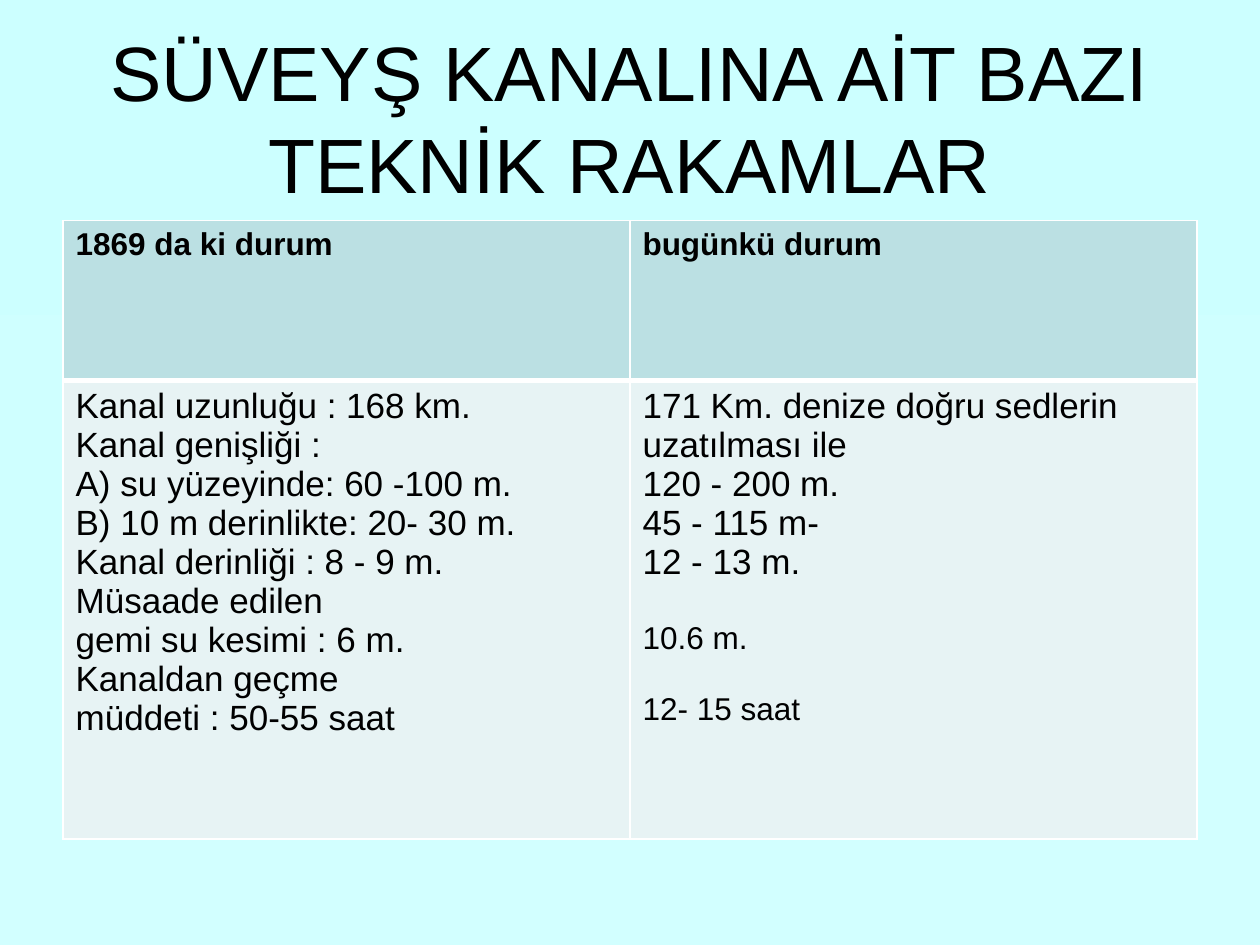
"""Build a slide comparing the Suez Canal's figures in 1869 and today."""
from lxml import etree
from pptx import Presentation
from pptx.dml.color import RGBColor
from pptx.enum.text import MSO_ANCHOR, PP_ALIGN
from pptx.oxml.ns import qn
from pptx.util import Inches, Pt

CENTER = PP_ALIGN.CENTER
MIDDLE = MSO_ANCHOR.MIDDLE
TOP = MSO_ANCHOR.TOP
BLACK = RGBColor(0x00, 0x00, 0x00)
WHITE = RGBColor(0xFF, 0xFF, 0xFF)
SKY_TOP = RGBColor(0xCC, 0xFF, 0xFF)
SKY_BOTTOM = RGBColor(0xD2, 0xFF, 0xFF)
HEADER_FILL = RGBColor(0xBB, 0xE0, 0xE3)
BODY_FILL = RGBColor(0xE7, 0xF3, 0xF4)
FONT = "Arial"

TITLE = "SÜVEYŞ KANALINA AİT BAZI TEKNİK RAKAMLAR"
HEADERS = ["1869 da ki durum", "bugünkü durum"]
FIGURES_1869 = [
    "Kanal uzunluğu : 168 km.",
    "Kanal genişliği :",
    "A) su yüzeyinde: 60 -100 m.",
    "B) 10 m derinlikte: 20- 30 m.",
    "Kanal derinliği : 8 - 9 m.",
    "Müsaade edilen",
    "gemi su kesimi : 6 m.",
    "Kanaldan geçme",
    "müddeti : 50-55 saat",
]
FIGURES_TODAY = [
    "171 Km. denize doğru sedlerin",
    "uzatılması ile",
    "120 - 200 m.",
    "45 - 115 m-",
    "12 - 13 m.",
]
SPACED_FIGURES = [("10.6 m.", 22.5), ("12- 15 saat", 20.25)]


def write_text(paragraph, text, size=20, bold=False, align=None, before=0):
    paragraph.alignment = align
    paragraph.space_before = Pt(before)
    run = paragraph.add_run()
    run.text = text
    run.font.name = FONT
    run.font.size = Pt(size)
    run.font.bold = bold
    run.font.color.rgb = BLACK


class SlideBuilder:
    def __init__(self, presentation):
        self.slide = presentation.slides.add_slide(presentation.slide_layouts[5])

    def background(self, top, bottom):
        fill = self.slide.background.fill
        fill.gradient()
        fill.gradient_angle = 270
        for stop, color in zip(fill.gradient_stops, (top, bottom)):
            stop.color.rgb = color

    def title(self, text, left, top, width, height):
        shape = self.slide.shapes.title
        shape.left, shape.top = Inches(left), Inches(top)
        shape.width, shape.height = Inches(width), Inches(height)
        frame = shape.text_frame
        frame.word_wrap = True
        frame.vertical_anchor = MIDDLE
        write_text(frame.paragraphs[0], text, size=44, align=CENTER)

    def table(self, left, top, column_widths, row_heights):
        table = self.slide.shapes.add_table(
            len(row_heights), len(column_widths), Inches(left), Inches(top),
            Inches(sum(column_widths)), Inches(sum(row_heights))).table
        for column, width in zip(table.columns, column_widths):
            column.width = Inches(width)
        for row, height in zip(table.rows, row_heights):
            row.height = Inches(height)
        return table

    def cell(self, cell, lines, fill, borders):
        cell.vertical_anchor = TOP
        properties = cell._tc.get_or_add_tcPr()
        for side, width in zip("LRTB", borders):
            line = etree.SubElement(properties, qn(f"a:ln{side}"), w=str(Pt(width)))
            solid = etree.SubElement(line, qn("a:solidFill"))
            etree.SubElement(solid, qn("a:srgbClr"), val=str(WHITE))
        cell.fill.solid()
        cell.fill.fore_color.rgb = fill
        frame = cell.text_frame
        for index, (text, style) in enumerate(lines):
            paragraph = frame.add_paragraph() if index else frame.paragraphs[0]
            write_text(paragraph, text, **style)


def main():
    presentation = Presentation()
    presentation.slide_width, presentation.slide_height = Inches(10), Inches(7.5)
    builder = SlideBuilder(presentation)
    builder.background(SKY_TOP, SKY_BOTTOM)
    builder.title(TITLE, 0.5, 0.3, 9, 1.25)
    table = builder.table(0.5, 1.75, [4.5, 4.5], [1.27, 3.64])

    bodies = [[(text, {}) for text in figures]
              for figures in (FIGURES_1869, FIGURES_TODAY)]
    bodies[1] += [(text, {"size": 18, "before": gap}) for text, gap in SPACED_FIGURES]
    for column, (header, body) in enumerate(zip(HEADERS, bodies)):
        builder.cell(table.cell(0, column), [(header, {"size": 18, "bold": True})],
                     HEADER_FILL, (1, 1, 1, 3))
        builder.cell(table.cell(1, column), body, BODY_FILL, (1, 1, 3, 1))
    presentation.save("out.pptx")


if __name__ == "__main__":
    main()
